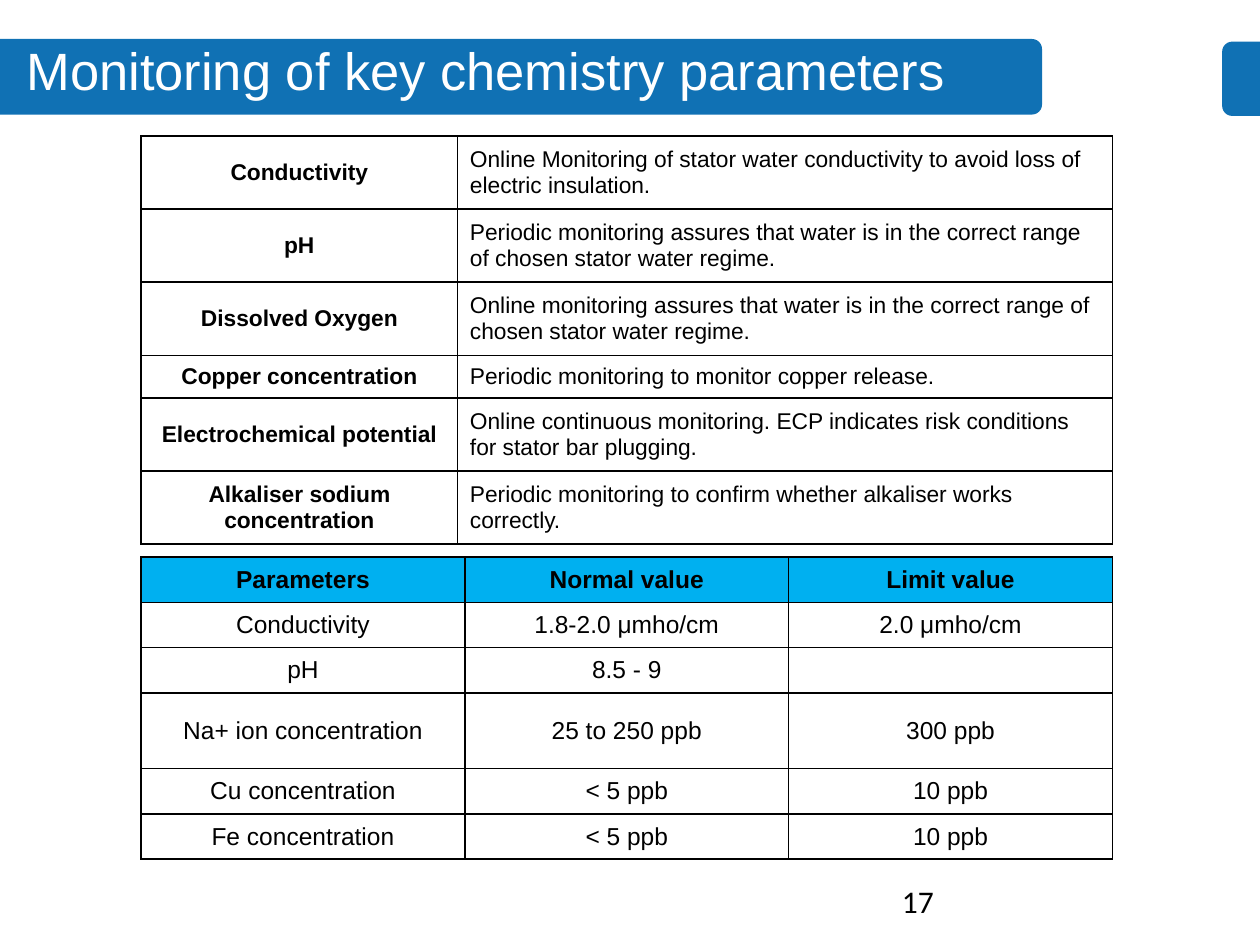
from lxml import etree
from pptx import Presentation
from pptx import util as u
from pptx.dml.color import RGBColor
from pptx.enum import shapes, text
from pptx.oxml import ns

BLUE = RGBColor(0x10, 0x71, 0xB4)
CYAN = RGBColor(0x00, 0xB0, 0xF0)
WHITE = RGBColor(0xFF, 0xFF, 0xFF)
BLACK = RGBColor(0x00, 0x00, 0x00)
CENTER, LEFT = text.PP_ALIGN.CENTER, text.PP_ALIGN.LEFT

PURPOSES = [
    ("Conductivity", "Online Monitoring of stator water conductivity to avoid loss of electric insulation."),
    ("pH", "Periodic monitoring assures that water is in the correct range of chosen stator water regime."),
    ("Dissolved Oxygen", "Online monitoring assures that water is in the correct range of chosen stator water regime."),
    ("Copper concentration", "Periodic monitoring to monitor copper release."),
    ("Electrochemical potential", "Online continuous monitoring. ECP indicates risk conditions for stator bar plugging."),
    ("Alkaliser sodium concentration", "Periodic monitoring to confirm whether alkaliser works correctly."),
]
LIMITS = [
    ("Parameters", "Normal value", "Limit value"),
    ("Conductivity", "1.8-2.0 μmho/cm", "2.0 μmho/cm"),
    ("pH", "8.5 - 9", ""),
    ("Na+ ion concentration", "25 to 250 ppb", "300 ppb"),
    ("Cu concentration", "< 5 ppb", "10 ppb"),
    ("Fe concentration", "< 5 ppb", "10 ppb"),
]


def write(frame, words, size, font="Arial", color=BLACK, bold=False, align=LEFT):
    """Put formatted words into the first paragraph of a text frame."""
    para = frame.paragraphs[0]
    para.alignment = align
    span = para.add_run()
    span.text = words
    span.font.size = u.Pt(size)
    span.font.name = font
    span.font.bold = bold
    span.font.color.rgb = color


def place(box, left, top, width, height):
    """Position and size a shape, with lengths in inches."""
    box.left, box.top = u.Inches(left), u.Inches(top)
    box.width, box.height = u.Inches(width), u.Inches(height)


def add_bar(page, left, top, width, height, turn):
    """Add a bar rounded at one end, behind the title."""
    bar = page.shapes.add_shape(shapes.MSO_SHAPE.ROUND_2_SAME_RECTANGLE, 0, 0, 0, 0)
    place(bar, left + (width - height) / 2, top + (height - width) / 2, height, width)
    bar.rotation = turn
    bar.adjustments[0] = 0.08 / min(width, height)
    bar.shadow.inherit = False
    bar.fill.solid()
    bar.fill.fore_color.rgb = BLUE
    bar.line.fill.background()
    page.shapes.title.element.addprevious(bar.element)


def add_title(page, words):
    """Fill and place the title placeholder."""
    title = page.shapes.title
    place(title, 0, 0.25, 7.82, 0.61)
    frame = title.text_frame
    frame.auto_size = text.MSO_AUTO_SIZE.NONE
    frame.vertical_anchor = text.MSO_ANCHOR.TOP
    frame.margin_left = u.Inches(0.21)
    write(frame, words, 30, color=WHITE)


def border(cell):
    """Draw a thin black line on every side of a cell."""
    properties = cell._tc.get_or_add_tcPr()
    for index, side in enumerate(("lnL", "lnR", "lnT", "lnB")):
        line = etree.Element(ns.qn(f"a:{side}"), w=str(u.Pt(1)))
        fill = etree.SubElement(line, ns.qn("a:solidFill"))
        etree.SubElement(fill, ns.qn("a:srgbClr"), val=str(BLACK))
        properties.insert(index, line)


def add_grid(page, top, rows, widths, heights, size, margins, style):
    """Add a bordered table; style maps row and column to fill, bold and alignment."""
    holder = page.shapes.add_table(
        len(rows), len(widths), u.Inches(1.12), u.Inches(top),
        u.Inches(sum(widths)), u.Inches(sum(heights)))
    grid = holder.table
    grid.first_row = grid.horz_banding = False
    for column, width in zip(grid.columns, widths):
        column.width = u.Inches(width)
    for r, (values, height) in enumerate(zip(rows, heights)):
        grid.rows[r].height = u.Inches(height)
        for c, words in enumerate(values):
            cell = grid.cell(r, c)
            fill, bold, align = style(r, c)
            cell.margin_left = cell.margin_right = u.Inches(margins[0])
            cell.margin_top = cell.margin_bottom = u.Inches(margins[1])
            cell.vertical_anchor = text.MSO_ANCHOR.MIDDLE
            if fill is None:
                cell.fill.background()
            else:
                cell.fill.solid()
                cell.fill.fore_color.rgb = fill
            border(cell)
            write(cell.text_frame, words, size, bold=bold, align=align)


def purpose_style(row, column):
    """Make the first column bold and centred."""
    return (None, True, CENTER) if column == 0 else (None, False, LEFT)


def limit_style(row, column):
    """Make the header row bold on cyan and centre everything."""
    return (CYAN, True, CENTER) if row == 0 else (None, False, CENTER)


def add_page_number(page, number):
    """Add the page number at the foot."""
    box = page.shapes.add_textbox(u.Inches(7.06), u.Inches(6.95), u.Inches(2.25), u.Inches(0.4))
    box.text_frame.word_wrap = True
    write(box.text_frame, number, 18, font="Calibri")


def main():
    """Build and save the slide."""
    deck = Presentation()
    deck.slide_width, deck.slide_height = u.Inches(10), u.Inches(7.5)
    page = deck.slides.add_slide(deck.slide_layouts[5])
    add_bar(page, 0, 0.31, 8.27, 0.6, 90)
    add_bar(page, 9.7, 0.33, 0.3, 0.59, 270)
    add_title(page, "Monitoring of key chemistry parameters")
    add_grid(page, 1.08, PURPOSES, [2.51, 5.2], [0.58] * 3 + [0.34] + [0.58] * 2,
             13, (0.1, 0.05), purpose_style)
    add_page_number(page, "17")
    add_grid(page, 4.42, LIMITS, [2.57] * 3, [0.36] * 3 + [0.6] + [0.36] * 2,
             14, (0.07, 0), limit_style)
    deck.save("out.pptx")


if __name__ == "__main__":
    main()
